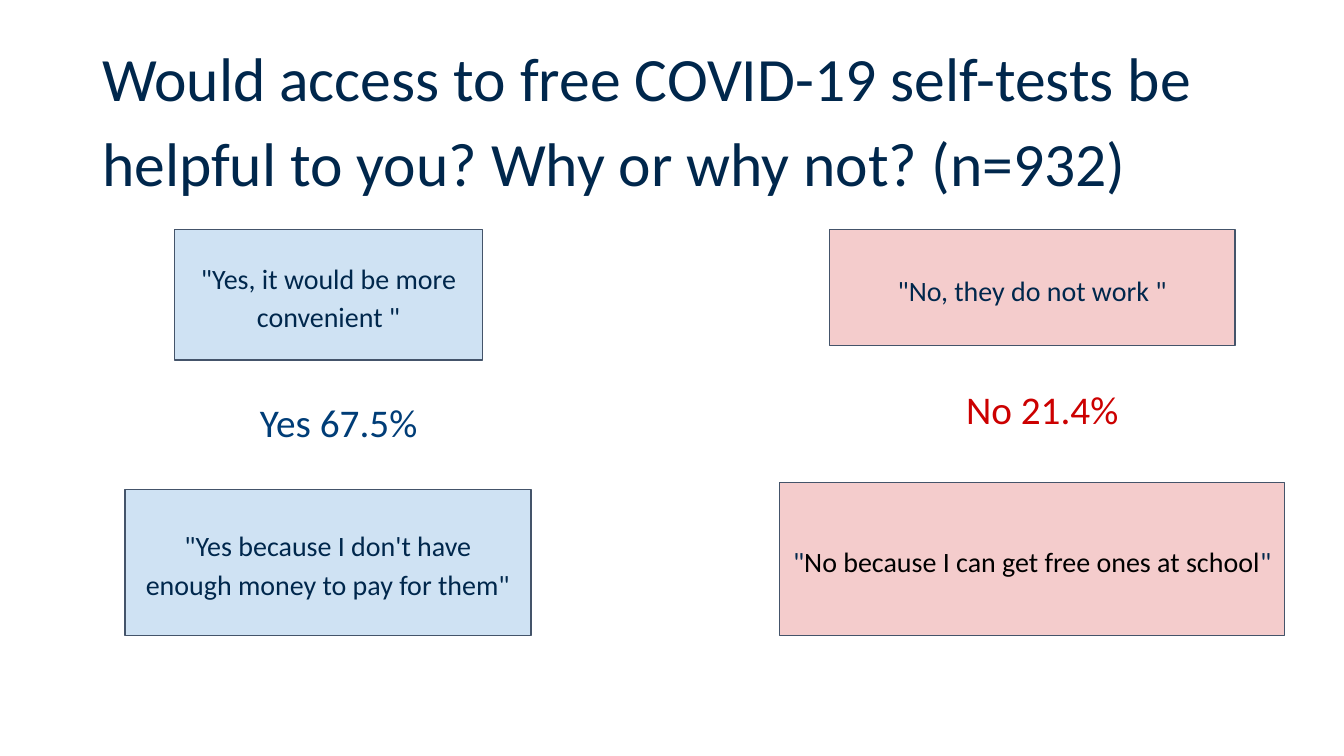
import dataclasses
import typing

import pptx
import pptx.dml.color
import pptx.enum.shapes
import pptx.enum.text
import pptx.util

Inches = pptx.util.Inches
Pt = pptx.util.Pt
ALIGN = pptx.enum.text.PP_ALIGN
ANCHOR = pptx.enum.text.MSO_ANCHOR

FONT = "Calibri"
HUES = {
    "navy": "00274C",
    "blue": "003D77",
    "red": "CC0000",
    "black": "000000",
    "sky": "CFE2F3",
    "pink": "F4CCCC",
    "slate": "44546A",
}

Run = tuple[str, str]  # text, colour name
Box = tuple[float, float, float, float]  # left, top, width, height


@dataclasses.dataclass
class Label:
    box: Box
    runs: list[Run]
    size: float = 21
    space: float = 0.9
    align: typing.Any = ALIGN.CENTER
    anchor: typing.Any = ANCHOR.TOP
    hang: bool = True


@dataclasses.dataclass
class Quote:
    box: Box
    fill: str
    tip: tuple[float, float]  # callout tip, from the centre
    runs: list[Run]
    side: float = 0.1  # left and right padding


def hue(name: str) -> pptx.dml.color.RGBColor:
    return pptx.dml.color.RGBColor.from_string(HUES[name])


def write(frame, runs: list[Run], size: float, space: float, align, anchor,
          pads: tuple[float, float]):
    """Fill a text frame with one paragraph and return that paragraph."""
    frame.word_wrap = True
    frame.vertical_anchor = anchor
    frame.margin_left = frame.margin_right = Inches(pads[0])
    frame.margin_top = frame.margin_bottom = Inches(pads[1])
    para = frame.paragraphs[0]
    para.alignment = align
    para.line_spacing = space
    for text, tone in runs:
        run = para.add_run()
        run.text = text
        run.font.name = FONT
        run.font.size = Pt(size)
        run.font.color.rgb = hue(tone)
    return para


def draw_label(slide, label: Label) -> None:
    box = slide.shapes.add_textbox(*map(Inches, label.box))
    para = write(box.text_frame, label.runs, label.size, label.space,
                 label.align, label.anchor, (0.07, 0.04))
    if label.hang:
        props = para._p.get_or_add_pPr()
        props.set("marL", str(Inches(0.19)))
        props.set("indent", str(Inches(-0.04)))


def draw_quote(slide, quote: Quote) -> None:
    kind = pptx.enum.shapes.MSO_SHAPE.ROUNDED_RECTANGULAR_CALLOUT
    shape = slide.shapes.add_shape(kind, *map(Inches, quote.box))
    shape.shadow.inherit = False
    for spot, value in enumerate((*quote.tip, 0)):
        shape.adjustments[spot] = value
    shape.fill.solid()
    shape.fill.fore_color.rgb = hue(quote.fill)
    shape.line.color.rgb = hue("slate")
    shape.line.width = Pt(0.75)
    write(shape.text_frame, quote.runs, 15, 1.15, ALIGN.CENTER,
          ANCHOR.MIDDLE, (quote.side, 0.1))


LABELS = [
    # Title
    Label((0.69, 0.3, 8.62, 1.09),
          [("Would access to free COVID-19 self-tests be helpful to you? "
            "Why or why not? (n=932)", "navy")],
          33, 1.15, ALIGN.LEFT, ANCHOR.MIDDLE, False),
    # Shares of answers
    Label((1.49, 2.96, 1.91, 0.41), [("Yes 67.5%", "blue")]),
    Label((6.71, 2.87, 1.94, 0.41), [("No 21.4%", "red")]),
]

QUOTES = [
    # Yes side
    Quote((0.93, 3.64, 3.02, 1.09), "sky", (-0.17, -0.5),
          [('"Yes because I don\'t have enough money to pay for them"',
            "navy")], 0.12),
    Quote((1.3, 1.71, 2.29, 0.97), "sky", (-0.5, -0.27),
          [('"Yes, it would be more convenient "', "navy")]),
    # No side
    Quote((6.17, 1.71, 3.02, 0.86), "pink", (0.2, -0.5),
          [('"No, they do not work "', "navy")]),
    Quote((5.8, 3.59, 3.76, 1.14), "pink", (-0.21, -0.5),
          [('"', "navy"),
           ("No because I can get free ones at school", "black"),
           ('"', "navy")]),
]


def main() -> None:
    deck = pptx.Presentation()
    # A 16:9 page
    deck.slide_width = Inches(10)
    deck.slide_height = Inches(10 * 9 / 16)
    slide = deck.slides.add_slide(deck.slide_layouts[6])
    for label in LABELS:
        draw_label(slide, label)
    for quote in QUOTES:
        draw_quote(slide, quote)
    deck.save("out.pptx")


if __name__ == "__main__":
    main()
